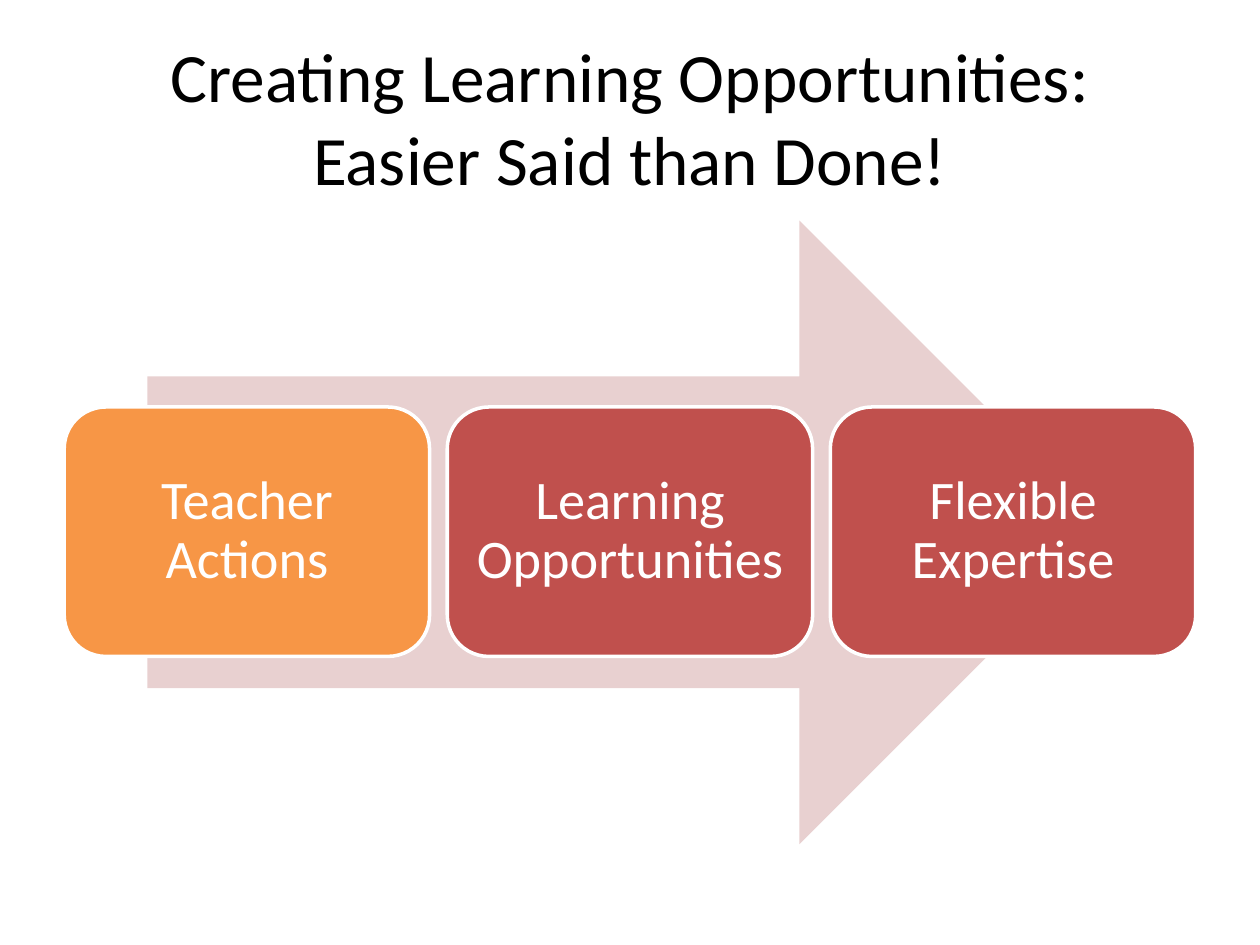
from pptx import Presentation
from pptx.dml.color import RGBColor
from pptx.enum.shapes import MSO_SHAPE
from pptx.enum.text import MSO_ANCHOR, MSO_AUTO_SIZE, PP_ALIGN
from pptx.util import Inches, Pt

ARROW, ROUNDED = MSO_SHAPE.RIGHT_ARROW, MSO_SHAPE.ROUNDED_RECTANGLE
MIDDLE, CENTER, NO_FIT = MSO_ANCHOR.MIDDLE, PP_ALIGN.CENTER, MSO_AUTO_SIZE.NONE
WHITE, BLACK, ORANGE, RED, PINK = "FFFFFF", "000000", "F79646", "C0504D", "E8D0D0"


def rgb(color):
    return RGBColor.from_string(color)


def write(sp, text, size, color, **paragraph_format):
    """Fill a shape with one centred paragraph."""
    tf = sp.text_frame
    tf.auto_size = NO_FIT
    tf.word_wrap = True
    tf.vertical_anchor = MIDDLE
    p = tf.paragraphs[0]
    p.text = text
    p.alignment = CENTER
    for name, value in paragraph_format.items():
        setattr(p, name, value)
    for r in p.runs:
        for name, value in {"name": "Calibri", "size": Pt(size)}.items():
            setattr(r.font, name, value)
        r.font.color.rgb = rgb(color)


prs = Presentation()
prs.slide_width, prs.slide_height = Inches(10), Inches(7.5)
s = prs.slides.add_slide(prs.slide_layouts[5])

title = s.shapes.title
title.left, title.top = Inches(0.5), Inches(0.3)
title.width, title.height = Inches(9), Inches(1.25)
write(title, "Creating Learning Opportunities:\vEasier Said than Done!", 39.6, BLACK)

arrow = s.shapes.add_shape(ARROW, Inches(1.17), Inches(1.75), Inches(7.65), Inches(4.95))
arrow.shadow.inherit = False
arrow.fill.solid()
arrow.fill.fore_color.rgb = rgb(PINK)
arrow.line.fill.background()

steps = [
    ("Teacher Actions", ORANGE),
    ("Learning Opportunities", RED),
    ("Flexible Expertise", RED),
]
left, width, gap = 0.51, 2.9, 0.14
for i, (text, color) in enumerate(steps):
    x = left + i * (width + gap)
    sp = s.shapes.add_shape(ROUNDED, Inches(x), Inches(3.23), Inches(width), Inches(1.98))
    sp.shadow.inherit = False
    sp.fill.solid()
    sp.fill.fore_color.rgb = rgb(color)
    sp.line.color.rgb = rgb(WHITE)
    sp.line.width = Pt(2)
    for side in ("left", "top", "right", "bottom"):
        setattr(sp.text_frame, f"margin_{side}", Inches(0.13))
    write(sp, text, 31, WHITE, line_spacing=0.9)

prs.save("out.pptx")
